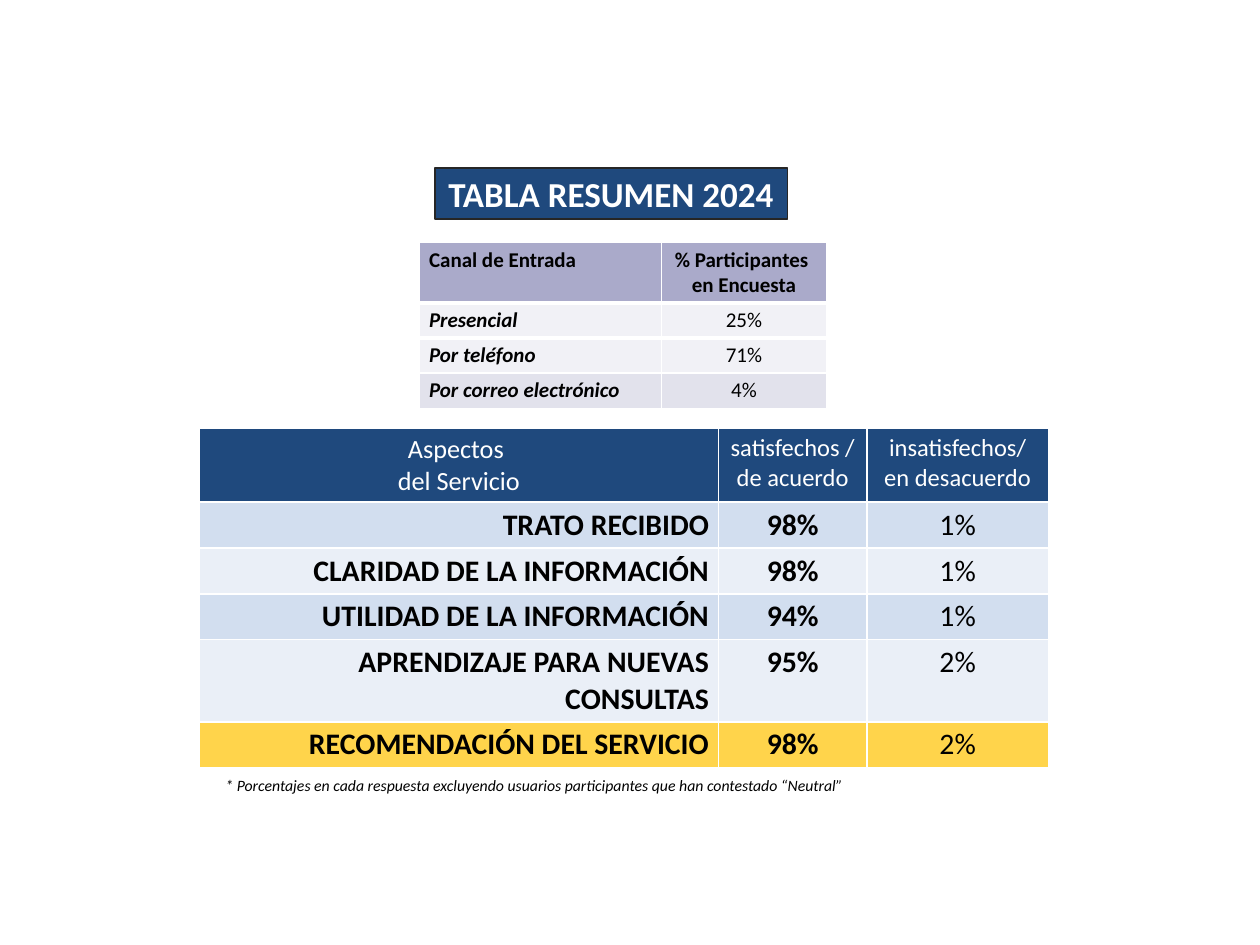
from lxml import etree
from pptx import Presentation
from pptx import util as u
from pptx.dml.color import RGBColor
from pptx.enum import shapes, text
from pptx.oxml import ns

NAVY = RGBColor(0x1F, 0x49, 0x7D)
WHITE = RGBColor(0xFF, 0xFF, 0xFF)
BLACK = RGBColor(0, 0, 0)
EDGE = RGBColor(0x26, 0x26, 0x26)
BLUE = RGBColor(0xD2, 0xDE, 0xEF)
PALE = RGBColor(0xEA, 0xEF, 0xF7)
GOLD = RGBColor(0xFF, 0xD4, 0x4B)
LILAC = RGBColor(0xAA, 0xAA, 0xCA)
MIST = RGBColor(0xF1, 0xF1, 0xF6)
HAZE = RGBColor(0xE2, 0xE2, 0xEC)
LEFT, MID, RIGHT, FULL = (text.PP_ALIGN.LEFT, text.PP_ALIGN.CENTER,
                          text.PP_ALIGN.RIGHT, text.PP_ALIGN.JUSTIFY)


class Sheet:
    """Draw styled titles, notes and tables on one slide, in points."""

    font = "Calibri"
    pad = (5.4, 2.7)

    def __init__(self, deck):
        self.slide = deck.slides.add_slide(deck.slide_layouts[6])

    def label(self, frame, words, size, color=BLACK, bold=False, slant=False, align=MID):
        frame.text = words
        for para in frame.paragraphs:
            para.alignment = align
            for run in para.runs:
                font = run.font
                font.name, font.size = self.font, u.Pt(size)
                font.bold, font.italic = bold, slant
                font.color.rgb = color

    def inset(self, item):
        side, top = map(u.Pt, self.pad)
        item.margin_left = item.margin_right = side
        item.margin_top = item.margin_bottom = top

    def title(self, box, words):
        item = self.slide.shapes.add_shape(
            shapes.MSO_SHAPE.RECTANGLE, *map(u.Pt, box))
        item.shadow.inherit = False
        item.fill.solid()
        item.fill.fore_color.rgb = NAVY
        item.line.color.rgb = EDGE
        item.line.width = u.Pt(1)
        frame = item.text_frame
        self.inset(frame)
        frame.vertical_anchor = text.MSO_ANCHOR.MIDDLE
        self.label(frame, words, 20, WHITE, bold=True)

    def note(self, box, words):
        frame = self.slide.shapes.add_textbox(*map(u.Pt, box)).text_frame
        frame.word_wrap = True
        frame.auto_size = text.MSO_AUTO_SIZE.SHAPE_TO_FIT_TEXT
        self.label(frame, words, 9, slant=True, align=FULL)

    def edge(self, cell, top, base):
        props = cell._tc.get_or_add_tcPr()
        for side, width in zip("LRTB", (1, 1, top, base)):
            line = etree.SubElement(props, ns.qn(f"a:ln{side}"), w=str(u.Pt(width)))
            fill = etree.SubElement(line, ns.qn("a:solidFill"))
            etree.SubElement(fill, ns.qn("a:srgbClr"), val=str(WHITE))

    def table(self, spot, cols, highs, rows, fills, rules, style):
        frame = self.slide.shapes.add_table(
            len(rows), len(cols), *map(u.Pt, (*spot, sum(cols), sum(highs))))
        grid = frame.table
        for col, width in zip(grid.columns, cols):
            col.width = u.Pt(width)
        for r, (row, high) in enumerate(zip(rows, highs)):
            grid.rows[r].height = u.Pt(high)
            for c, words in enumerate(row):
                cell = grid.cell(r, c)
                self.inset(cell)
                self.edge(cell, rules[r], rules[r + 1])
                cell.fill.solid()
                cell.fill.fore_color.rgb = fills[r]
                self.label(cell.text_frame, words, **style(r, c))


def score(r, c):
    if r == 0:
        return dict(size=14 if c else 15, color=WHITE)
    return dict(size=17, bold=c < 2, align=MID if c else RIGHT)


def entry(r, c):
    return dict(size=12, bold=r == 0 or c == 0, slant=r > 0 and c == 0,
                align=MID if c else LEFT)


def main():
    deck = Presentation()
    deck.slide_width, deck.slide_height = u.Pt(720), u.Pt(540)
    sheet = Sheet(deck)
    sheet.table(
        (113.8, 244.8), (296.8, 84.8, 103.7), [41] + [25.2] * 5,
        [("Aspectos \ndel Servicio", "satisfechos /\nde acuerdo",
          "insatisfechos/\nen desacuerdo"),
         ("TRATO RECIBIDO", "98%", "1%"),
         ("CLARIDAD DE LA INFORMACIÓN", "98%", "1%"),
         ("UTILIDAD DE LA INFORMACIÓN", "94%", "1%"),
         ("APRENDIZAJE PARA NUEVAS CONSULTAS", "95%", "2%"),
         ("RECOMENDACIÓN DEL SERVICIO", "98%", "2%")],
        (NAVY, BLUE, PALE, BLUE, PALE, GOLD), [1] * 7, score)
    sheet.table(
        (239.8, 138.5), (138.2, 94.3), [33.6] + [20] * 3,
        [("Canal de Entrada", "% Participantes \nen Encuesta"),
         ("Presencial", "25%"),
         ("Por teléfono", "71%"),
         ("Por correo electrónico", "4%")],
        (LILAC, MIST, MIST, HAZE), (1, 3, 3, 1, 1), entry)
    sheet.title((248.4, 95.8, 201.6, 29.5), "TABLA RESUMEN 2024")
    sheet.note((121.7, 440, 399.6, 18),
               "* Porcentajes en cada respuesta excluyendo usuarios "
               "participantes que han contestado “Neutral”")
    deck.save("out.pptx")


if __name__ == "__main__":
    main()
